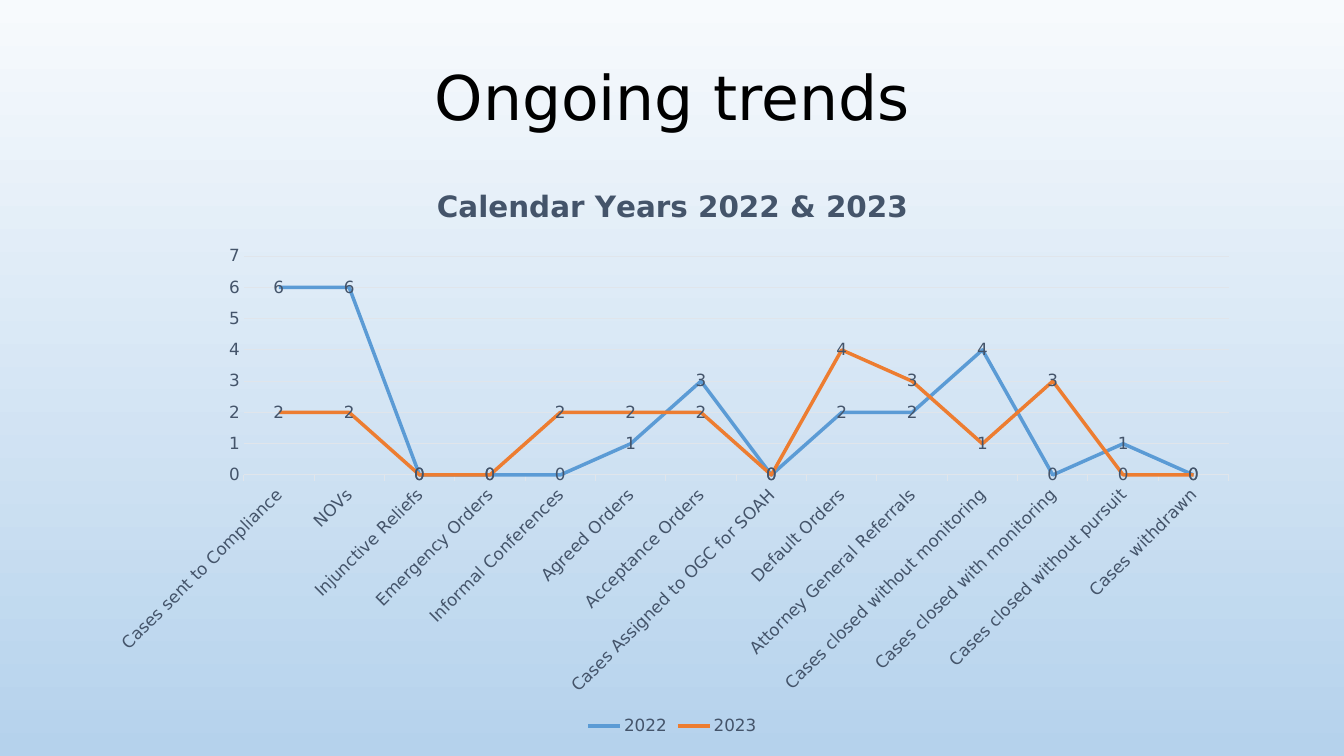
from dataclasses import dataclass

from lxml.etree import fromstring
from pptx import Presentation
from pptx.chart.data import CategoryChartData
from pptx.dml.color import RGBColor
from pptx.enum.chart import XL_CHART_TYPE as ChartType
from pptx.enum.chart import XL_LABEL_POSITION as LabelPosition
from pptx.enum.chart import XL_LEGEND_POSITION as LegendPosition
from pptx.enum.chart import XL_TICK_MARK as TickMark
from pptx.enum.text import MSO_ANCHOR as Anchor
from pptx.enum.text import PP_ALIGN as Align
from pptx.oxml.ns import nsdecls, qn
from pptx.util import Emu, Pt


@dataclass(frozen=True)
class Theme:
    font: str = "DejaVu Sans"
    ink: str = "000000"
    slate: str = "44546A"
    grid: str = "E0E5EB"
    sky_top: str = "F7FAFD"
    sky_bottom: str = "B5D2EC"
    year_colors: tuple = ("5B9BD5", "ED7D31")
    heading_size: float = 44
    chart_title_size: float = 21
    label_size: float = 12
    grid_width: float = 0.75
    trend_width: float = 2.5


THEME = Theme()
EMU_PER_PX = 914400 / 100.8

CASES_BY_STAGE = {
    "Cases sent to Compliance": (6, 2),
    "NOVs": (6, 2),
    "Injunctive Reliefs": (0, 0),
    "Emergency Orders": (0, 0),
    "Informal Conferences": (0, 2),
    "Agreed Orders": (1, 2),
    "Acceptance Orders": (3, 2),
    "Cases Assigned to OGC for SOAH": (0, 0),
    "Default Orders": (2, 4),
    "Attorney General Referrals": (2, 3),
    "Cases closed without monitoring": (4, 1),
    "Cases closed with monitoring": (0, 3),
    "Cases closed without pursuit": (1, 0),
    "Cases withdrawn": (0, 0),
}
YEARS = ("2022", "2023")


def px(length):
    return Emu(round(length * EMU_PER_PX))


def rgb(color):
    return RGBColor.from_string(color)


def style_font(font, size, color, bold=False):
    font.name = THEME.font
    font.size = Pt(size)
    font.bold = bold
    font.color.rgb = rgb(color)


def style_line(line, color, width):
    line.color.rgb = rgb(color)
    line.width = Pt(width)


def paint_background(slide):
    fill = slide.background.fill
    fill.gradient()
    fill.gradient_angle = 270
    for stop, color in zip(fill.gradient_stops, (THEME.sky_top, THEME.sky_bottom)):
        stop.color.rgb = rgb(color)


def write_heading(slide, wording):
    heading = slide.shapes.title
    heading.left, heading.top, heading.width, heading.height = map(px, (93, 15, 1159, 171))
    heading.text_frame.vertical_anchor = Anchor.MIDDLE
    paragraph = heading.text_frame.paragraphs[0]
    paragraph.alignment = Align.CENTER
    paragraph.line_spacing = 0.9
    run = paragraph.add_run()
    run.text = wording
    style_font(run.font, THEME.heading_size, THEME.ink)


def title_chart(chart, wording):
    chart.has_title = True
    chart.chart_title.include_in_layout = False
    run = chart.chart_title.text_frame.paragraphs[0].add_run()
    run.text = wording
    style_font(run.font, THEME.chart_title_size, THEME.slate, bold=True)


def place_plot(chart, x, y, w, h):
    plot_area = chart._chartSpace.chart.plotArea
    for layout in plot_area.findall(qn("c:layout")):
        plot_area.remove(layout)
    bounds = "".join(
        f'<c:{side} val="{share}"/>' for side, share in zip("xywh", (x, y, w, h))
    )
    plot_area.insert(0, fromstring(
        f'<c:layout {nsdecls("c")}><c:manualLayout><c:layoutTarget val="inner"/>'
        f'<c:xMode val="edge"/><c:yMode val="edge"/>{bounds}'
        f"</c:manualLayout></c:layout>"
    ))


def style_axes(chart):
    stages, counts = chart.category_axis, chart.value_axis
    for axis in (stages, counts):
        style_font(axis.tick_labels.font, THEME.label_size, THEME.slate)
        axis.minor_tick_mark = TickMark.NONE
    stages.major_tick_mark = TickMark.OUTSIDE
    style_line(stages.format.line, THEME.grid, THEME.grid_width)
    stages._element.txPr.bodyPr.set("rot", "-2700000")
    counts.major_tick_mark = TickMark.NONE
    counts.minimum_scale, counts.maximum_scale, counts.major_unit = 0, 7, 1
    counts.format.line.fill.background()
    counts.has_major_gridlines = True
    style_line(counts.major_gridlines.format.line, THEME.grid, THEME.grid_width)


def style_trends(chart):
    plot = chart.plots[0]
    plot.vary_by_categories = False
    for trend, color in zip(plot.series, THEME.year_colors):
        trend.smooth = False
        style_line(trend.format.line, color, THEME.trend_width)
        labels = trend.data_labels
        labels.show_value = True
        labels.position = LabelPosition.CENTER
        style_font(labels.font, THEME.label_size, THEME.slate)


def add_legend(chart):
    chart.has_legend = True
    chart.legend.position = LegendPosition.BOTTOM
    chart.legend.include_in_layout = False
    style_font(chart.legend.font, THEME.label_size, THEME.slate)


def add_trend_chart(slide):
    cases = CategoryChartData()
    cases.categories = list(CASES_BY_STAGE)
    for year, counts in zip(YEARS, zip(*CASES_BY_STAGE.values())):
        cases.add_series(year, counts)
    bounds = map(px, (93, 164, 1159, 576))
    chart = slide.shapes.add_chart(ChartType.LINE, *bounds, cases).chart
    style_font(chart.font, THEME.label_size, THEME.slate)
    title_chart(chart, "Calendar Years 2022 & 2023")
    place_plot(chart, 0.13, 0.16, 0.85, 0.38)
    style_axes(chart)
    style_trends(chart)
    add_legend(chart)


def main():
    deck = Presentation()
    deck.slide_width, deck.slide_height = px(1344), px(756)
    slide = deck.slides.add_slide(deck.slide_layouts[5])
    paint_background(slide)
    write_heading(slide, "Ongoing trends")
    add_trend_chart(slide)
    deck.save("out.pptx")


if __name__ == "__main__":
    main()
